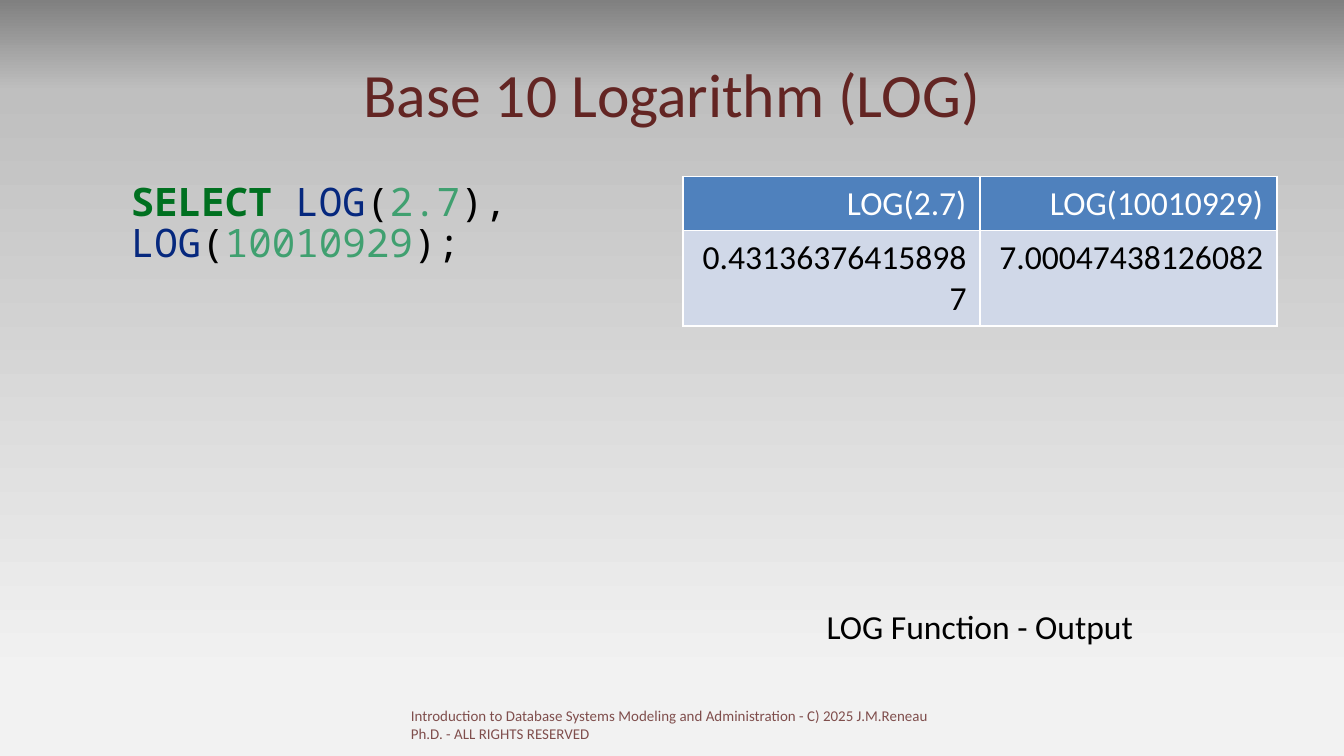
from lxml import etree
from pptx import Presentation
from pptx.dml.color import RGBColor
from pptx.enum.text import MSO_ANCHOR, PP_ALIGN
from pptx.oxml.ns import qn
from pptx.util import Pt

LEFT, CENTER, RIGHT = PP_ALIGN.LEFT, PP_ALIGN.CENTER, PP_ALIGN.RIGHT
TOP, MIDDLE = MSO_ANCHOR.TOP, MSO_ANCHOR.MIDDLE

BODY_FONT, CODE_FONT = "Calibri", "Noto Sans Mono"
BLACK, WHITE, MAROON = "000000", "FFFFFF", "632523"
KEYWORD, FUNCTION, NUMBER = "007020", "06287E", "40A070"
HEADER_FILL, ROW_FILL = "4F81BD", "D0D8E8"

BACKGROUND_STOPS = [(0, "808080"), (12, "BFBFBF"), (90, "F2F2F2")]
CODE = [
    ("SELECT ", KEYWORD), ("LOG", FUNCTION), ("(", BLACK), ("2.7", NUMBER),
    ("), ", BLACK), ("LOG", FUNCTION), ("(", BLACK), ("10010929", NUMBER),
    (");", BLACK),
]
OUTPUT = [
    ["LOG(2.7)", "LOG(10010929)"],
    ["0.431363764158987", "7.00047438126082"],
]
FOOTER = ("Introduction to Database Systems Modeling and Administration - "
          "C) 2025 J.M.Reneau Ph.D. - ALL RIGHTS RESERVED")


def color(value):
    return RGBColor.from_string(value)


def format_run(run, size, value, font=BODY_FONT, bold=False):
    run.font.size = Pt(size)
    run.font.name = font
    run.font.bold = bold
    run.font.color.rgb = color(value)


def set_background(slide):
    fill = slide.background.fill
    fill.gradient()
    fill.gradient_angle = 270
    stop_list = slide.background._cSld.find(".//" + qn("a:gsLst"))
    for stop in list(stop_list):
        stop_list.remove(stop)
    for position, value in BACKGROUND_STOPS:
        stop = etree.SubElement(stop_list, qn("a:gs"), pos=str(position * 1000))
        etree.SubElement(stop, qn("a:srgbClr"), val=value)


def add_text_frame(slide, left, top, width, height, anchor=TOP):
    box = slide.shapes.add_textbox(Pt(left), Pt(top), Pt(width), Pt(height))
    box.text_frame.word_wrap = True
    box.text_frame.vertical_anchor = anchor
    return box.text_frame


def add_text(slide, text, bounds, size, value, align, anchor=TOP):
    frame = add_text_frame(slide, *bounds, anchor=anchor)
    frame.text = text
    paragraph = frame.paragraphs[0]
    paragraph.alignment = align
    format_run(paragraph.runs[0], size, value)
    return paragraph.runs[0]


def set_opacity(run, percent):
    color_element = run._r.find(".//" + qn("a:srgbClr"))
    etree.SubElement(color_element, qn("a:alpha"), val=str(percent * 1000))


def add_code(slide, bounds):
    paragraph = add_text_frame(slide, *bounds).paragraphs[0]
    paragraph.space_before = Pt(2)
    paragraph.line_spacing = 0.88
    paragraph._p.get_or_add_pPr().set("marL", str(Pt(27)))
    for text, value in CODE:
        run = paragraph.add_run()
        run.text = text
        format_run(run, 21, value, CODE_FONT, bold=value == KEYWORD)


def set_borders(cell, value, width):
    properties = cell._tc.get_or_add_tcPr()
    # Borders come before the fill in the cell properties
    for index, side in enumerate(("a:lnL", "a:lnR", "a:lnT", "a:lnB")):
        line = etree.Element(qn(side), w=str(Pt(width)))
        fill = etree.SubElement(line, qn("a:solidFill"))
        etree.SubElement(fill, qn("a:srgbClr"), val=value)
        properties.insert(index, line)


def add_output_table(slide, left, top, width):
    heights = [29, 51]
    table = slide.shapes.add_table(len(OUTPUT), len(OUTPUT[0]), Pt(left),
                                   Pt(top), Pt(width), Pt(sum(heights))).table
    for row_index, values in enumerate(OUTPUT):
        table.rows[row_index].height = Pt(heights[row_index])
        is_header = row_index == 0
        for column_index, text in enumerate(values):
            cell = table.cell(row_index, column_index)
            cell.text = text
            cell.fill.solid()
            cell.fill.fore_color.rgb = color(HEADER_FILL if is_header else ROW_FILL)
            set_borders(cell, WHITE, 1)
            paragraph = cell.text_frame.paragraphs[0]
            paragraph.alignment = RIGHT
            format_run(paragraph.runs[0], 18, WHITE if is_header else BLACK)


def main():
    presentation = Presentation()
    presentation.slide_width, presentation.slide_height = Pt(720), Pt(405)
    slide = presentation.slides.add_slide(presentation.slide_layouts[6])
    set_background(slide)

    # Title
    add_text(slide, "Base 10 Logarithm (LOG)", (36, 16.2, 648, 67.5),
             33, MAROON, CENTER, MIDDLE)

    # Query on the left, its output on the right
    margin, column_width, content_top = 36, 318, 94.5
    right_column = 720 - margin - column_width
    add_code(slide, (margin, content_top, column_width, 267))
    add_output_table(slide, right_column, content_top, column_width)
    add_text(slide, "LOG Function - Output", (right_column, 321, column_width, 40.5),
             18, BLACK, CENTER)

    # Footer
    footer = add_text(slide, FOOTER, (213, 375, 292.5, 21.5), 8, MAROON, LEFT)
    set_opacity(footer, 80)

    presentation.save("out.pptx")


if __name__ == "__main__":
    main()
